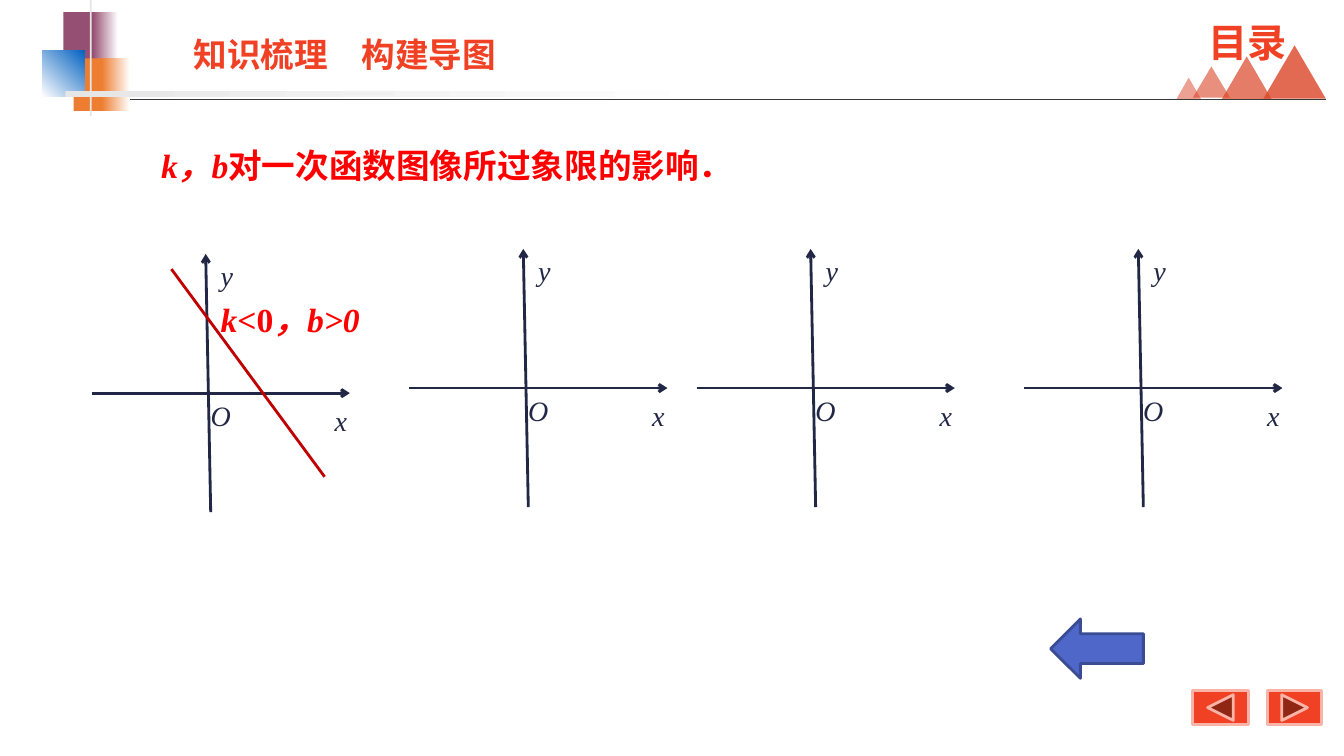
from dataclasses import dataclass
from typing import Optional

from lxml import etree
from pptx import Presentation
from pptx.dml.color import RGBColor
from pptx.enum.shapes import MSO_CONNECTOR, MSO_SHAPE
from pptx.enum.text import MSO_AUTO_SIZE, PP_ALIGN
from pptx.oxml.ns import qn
from pptx.shapes.autoshape import Shape
from pptx.shapes.connector import Connector
from pptx.util import Pt

PX = 9144  # EMU per px, 100 px to the inch
STRAIGHT = MSO_CONNECTOR.STRAIGHT
RECTANGLE = MSO_SHAPE.RECTANGLE
TRIANGLE = MSO_SHAPE.ISOSCELES_TRIANGLE
RIGHT_ARROW = MSO_SHAPE.RIGHT_ARROW
NEXT_BUTTON = MSO_SHAPE.ACTION_BUTTON_FORWARD_OR_NEXT
BACK_BUTTON = MSO_SHAPE.ACTION_BUTTON_BACK_OR_PREVIOUS
FIT_SHAPE = MSO_AUTO_SIZE.SHAPE_TO_FIT_TEXT
LEFT, CENTER = PP_ALIGN.LEFT, PP_ALIGN.CENTER

SERIF = "Times New Roman"
SANS = "Noto Sans CJK SC"
COLORS = {
    "rule": "393A3B", "mountain": "DB4527", "accent": "F14124",
    "button_edge": "F9B3A7", "purple": "954F72", "orange": "ED7D31",
    "blue": "0563C1", "grey": "E7E6E6", "white": "FFFFFF",
    "axis": "212745", "red": "FF0000", "graph": "C00000",
    "arrow": "4E67C8", "arrow_edge": "3A4C94",
}

Box = tuple[int, int, int, int]
Point = tuple[int, int]


@dataclass
class Block:
    """A filled shape; a second colour makes the fill a gradient."""
    box: Box
    color: str
    kind: MSO_SHAPE = RECTANGLE
    end_color: Optional[str] = None
    angle: int = 0
    opacity: int = 100
    edge: Optional[str] = None
    rotation: int = 0


@dataclass
class Run:
    text: str
    size: int
    color: str
    font: str = SERIF
    bold: bool = False
    italic: bool = False


@dataclass
class Label:
    box: Box
    runs: list[Run]
    align: PP_ALIGN = LEFT
    spacing: float = 1.0
    wrap: bool = True


def rgb(name: str) -> RGBColor:
    return RGBColor.from_string(COLORS[name])


def draw_block(shapes, block: Block) -> Shape:
    shape = shapes.add_shape(block.kind, *(value * PX for value in block.box))
    shape.shadow.inherit = False
    shape.rotation = block.rotation
    if block.end_color:
        shape.fill.gradient()
        shape.fill.gradient_angle = block.angle
        for stop, name in zip(shape.fill.gradient_stops, (block.color, block.end_color)):
            stop.color.rgb = rgb(name)
    else:
        shape.fill.solid()
        shape.fill.fore_color.rgb = rgb(block.color)
    if block.opacity < 100:
        color = shape.element.spPr.find(f"{qn('a:solidFill')}/{qn('a:srgbClr')}")
        etree.SubElement(color, qn("a:alpha"), val=str(block.opacity * 1000))
    if block.edge:
        shape.line.color.rgb = rgb(block.edge)
        shape.line.width = Pt(2)
    else:
        shape.line.fill.background()
    return shape


def draw_line(shapes, start: Point, end: Point, color: str,
              width: float = 2, arrow: bool = False) -> Connector:
    line = shapes.add_connector(STRAIGHT, *(value * PX for value in start + end))
    line.line.color.rgb = rgb(color)
    line.line.width = Pt(width)
    if arrow:
        outline = line.element.spPr.find(qn("a:ln"))
        etree.SubElement(outline, qn("a:tailEnd"), type="arrow")
    etree.SubElement(line.element.spPr, qn("a:effectLst"))
    return line


def draw_label(shapes, label: Label) -> Shape:
    shape = shapes.add_textbox(*(value * PX for value in label.box))
    frame = shape.text_frame
    frame.word_wrap = label.wrap
    frame.auto_size = FIT_SHAPE
    paragraph = frame.paragraphs[0]
    paragraph.alignment = label.align
    paragraph.line_spacing = label.spacing
    for item in label.runs:
        run = paragraph.add_run()
        run.text = item.text
        font = run.font
        font.name, font.size = item.font, Pt(item.size)
        font.bold, font.italic = item.bold, item.italic
        font.color.rgb = rgb(item.color)
        east_asian = etree.Element(qn("a:ea"), typeface=SANS)
        run._r.rPr.find(qn("a:latin")).addnext(east_asian)
    return shape


def draw_axes(shapes, left: int, middle: int) -> None:
    """Coordinate axes whose horizontal axis starts at (left, middle)."""
    group = shapes.add_group_shape().shapes
    foot, top = (left + 118, middle + 118), (left + 113, middle - 138)
    draw_line(group, (left, middle), (left + 256, middle), "axis", arrow=True)
    draw_line(group, foot, top, "axis", arrow=True)
    for name, across, down, width in (("x", 231, 5, 30), ("y", 118, -138, 30), ("O", 108, 0, 54)):
        draw_label(group, Label((left + across, middle + down, width, 44),
                                [Run(name, 20, "axis", italic=True)]))


MOUNTAINS = [
    Block((1253, 45, 62, 53), "mountain", TRIANGLE, opacity=80),
    Block((1212, 56, 49, 42), "mountain", TRIANGLE, opacity=70),
    Block((1183, 66, 37, 31), "mountain", TRIANGLE, opacity=60),
    Block((1167, 77, 24, 21), "mountain", TRIANGLE, opacity=50),
]
BUTTONS = [
    Block((1257, 685, 54, 34), "accent", NEXT_BUTTON, edge="button_edge"),
    Block((1183, 685, 55, 34), "accent", BACK_BUTTON, edge="button_edge"),
]
ORNAMENT = [
    Block((63, 12, 33, 52), "purple"),
    Block((92, 12, 25, 52), "purple", end_color="white"),
    Block((73, 58, 32, 52), "orange"),
    Block((101, 58, 28, 52), "orange", end_color="white"),
    Block((42, 50, 42, 46), "white", end_color="blue", angle=45),
    Block((89, 0, 2, 115), "grey"),
    Block((65, 90, 654, 6), "grey", end_color="white"),
]
BACK_ARROW = Block((1042, 614, 92, 59), "arrow", RIGHT_ARROW, edge="arrow_edge", rotation=180)
AXES = [(91, 390), (406, 385), (691, 385), (1016, 385)]

CONTENTS = Label((1188, 13, 98, 57), [Run("目录", 28, "accent", bold=True)], CENTER, wrap=False)
TITLE = Label((160, 29, 364, 50), [Run("知识梳理　构建导图", 24, "accent", SANS, bold=True)], CENTER)
TOPIC = Label((150, 119, 906, 71), [
    Run("k，b", 24, "red", bold=True, italic=True),
    Run("对一次函数图像所过象限的影响．", 24, "red", SANS, bold=True),
], spacing=1.5)
CONDITION = Label((209, 272, 192, 71), [
    Run("k", 24, "red", bold=True, italic=True),
    Run("<0", 24, "red", bold=True),
    Run("，b>0", 24, "red", bold=True, italic=True),
], spacing=1.5)


def main() -> None:
    presentation = Presentation()
    presentation.slide_width, presentation.slide_height = 1333 * PX, 750 * PX
    slide = presentation.slides.add_slide(presentation.slide_layouts[6])
    shapes = slide.shapes

    # Header rule, mountains, navigation buttons
    draw_line(shapes, (124, 98), (1315, 98), "rule", width=0.25)
    for block in MOUNTAINS + BUTTONS:
        draw_block(shapes, block)
    draw_label(shapes, CONTENTS)

    # Corner ornament
    ornament = shapes.add_group_shape().shapes
    for block in ORNAMENT:
        draw_block(ornament, block)

    # Four coordinate systems
    for left, middle in AXES:
        draw_axes(shapes, left, middle)

    # Headings, back arrow, first graph with its condition
    draw_label(shapes, TOPIC)
    draw_label(shapes, TITLE)
    draw_block(shapes, BACK_ARROW)
    draw_line(shapes, (170, 267), (322, 473), "graph")
    draw_label(shapes, CONDITION)

    presentation.save("out.pptx")


if __name__ == "__main__":
    main()
